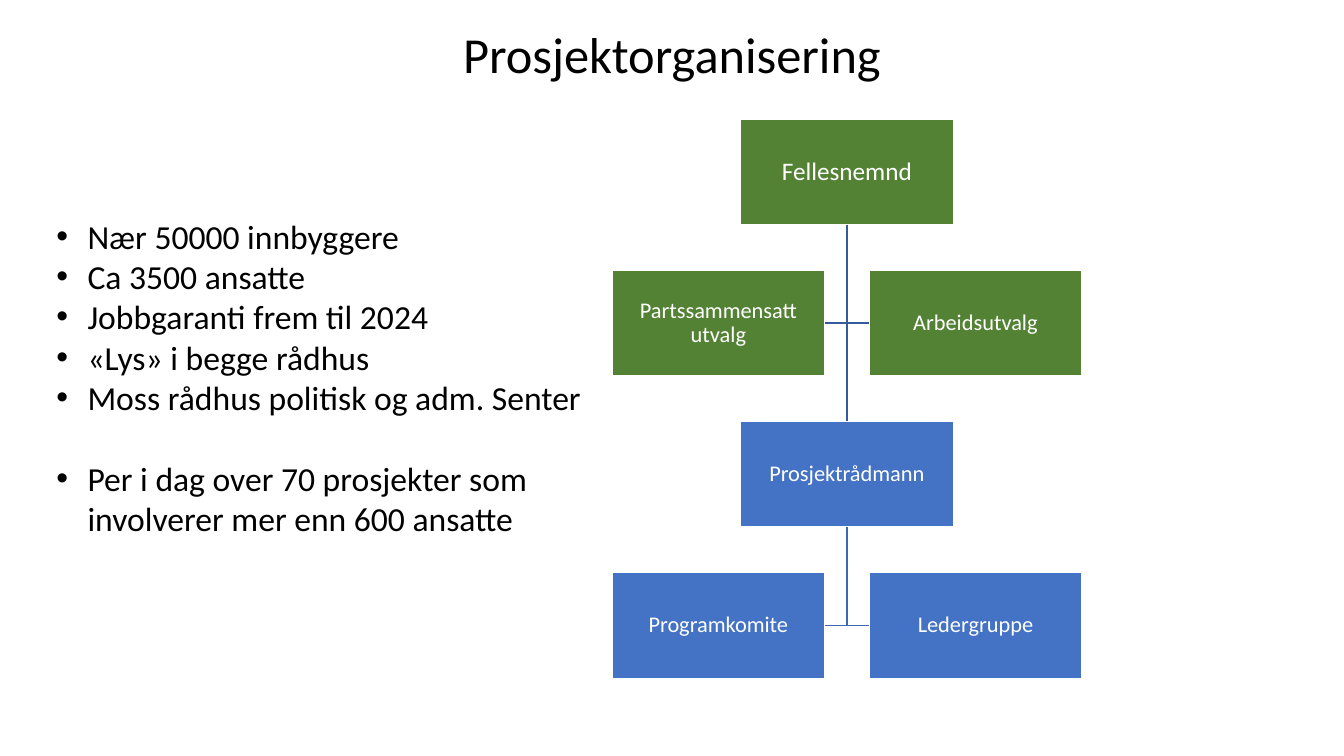
from pptx import Presentation
from pptx.dml.color import RGBColor
from pptx.enum.shapes import MSO_CONNECTOR as CONN, MSO_SHAPE as SHAPE
from pptx.enum.text import MSO_ANCHOR as ANCHOR, MSO_AUTO_SIZE as AUTO, PP_ALIGN as ALIGN
from pptx.oxml.ns import qn
from pptx.util import Inches, Pt
from lxml import etree

BLACK = RGBColor(0x00, 0x00, 0x00)
WHITE = RGBColor(0xFF, 0xFF, 0xFF)
GREEN = RGBColor(0x54, 0x82, 0x35)
BLUE = RGBColor(0x44, 0x72, 0xC4)
DARK_LINE = RGBColor(0x36, 0x5B, 0x9D)
LIGHT_LINE = RGBColor(0x3E, 0x67, 0xB2)

# Grid of the organisation chart, in inches
CENTRE, TOP, ROW_STEP = 8.4, 1.18, 1.5
BOX_W, BOX_H, HALF_GAP = 2.11, 1.05, 0.22


class OrgSlide:
    font = "Calibri"

    def __init__(self, prs):
        self.s = prs.slides.add_slide(prs.slide_layouts[5])

    def style(self, p, size, color, align=None, spacing=None):
        p.alignment = align
        p.line_spacing = spacing
        for r in p.runs:
            r.font.name = self.font
            r.font.size = Pt(size)
            r.font.color.rgb = color

    def title(self, text, x, y, w, h):
        sp = self.s.shapes.title
        sp.left, sp.top, sp.width, sp.height = map(Inches, (x, y, w, h))
        tf = sp.text_frame
        tf.text = text
        tf.vertical_anchor = ANCHOR.MIDDLE
        self.style(tf.paragraphs[0], 36, BLACK, ALIGN.CENTER, 0.9)

    def bullets(self, items, x, y, w, h):
        tf = self.s.shapes.add_textbox(*map(Inches, (x, y, w, h))).text_frame
        tf.word_wrap = True
        tf.auto_size = AUTO.SHAPE_TO_FIT_TEXT
        tf.text = "\n".join(items)
        for p in tf.paragraphs:
            pPr = p._p.get_or_add_pPr()
            pPr.set("marL", str(Inches(0.31)))
            pPr.set("indent", str(-Inches(0.31)))
            etree.SubElement(pPr, qn("a:buFont")).set("typeface", "Arial")
            etree.SubElement(pPr, qn("a:buChar")).set("char", "•")
            self.style(p, 24, BLACK)
        return tf

    def box(self, text, row, side, fill, size=16):
        """side: -1 left of the trunk, 0 on it, 1 right of it."""
        x = CENTRE - BOX_W / 2 + side * (BOX_W / 2 + HALF_GAP)
        y = TOP + row * ROW_STEP
        sp = self.s.shapes.add_shape(SHAPE.RECTANGLE, *map(Inches, (x, y, BOX_W, BOX_H)))
        sp.shadow.inherit = False
        sp.fill.solid()
        sp.fill.fore_color.rgb = fill
        sp.line.color.rgb = WHITE
        sp.line.width = Pt(1)
        tf = sp.text_frame
        tf.word_wrap = True
        tf.vertical_anchor = ANCHOR.MIDDLE
        tf.margin_left = tf.margin_right = tf.margin_top = tf.margin_bottom = Inches(0.01)
        tf.text = text
        self.style(tf.paragraphs[0], size, WHITE, ALIGN.CENTER, 0.9)
        return sp

    def trunk(self, upper, lower, color):
        line = self.s.shapes.add_connector(CONN.STRAIGHT, 0, 0, 0, 0)
        line.begin_connect(upper, 2)
        line.end_connect(lower, 0)
        line.line.color.rgb = color
        line.line.width = Pt(1)
        etree.SubElement(line._element.spPr, qn("a:effectLst"))

    def branch(self, parent, side, color):
        x, y = Inches(CENTRE), parent.top + parent.height
        end_y = parent.top + Inches(ROW_STEP + BOX_H / 2)
        fb = self.s.shapes.build_freeform(x, y)
        fb.add_line_segments([(x, end_y), (x + side * Inches(HALF_GAP), end_y)], close=False)
        sp = fb.convert_to_shape()
        sp.shadow.inherit = False
        sp.fill.background()
        sp.line.color.rgb = color
        sp.line.width = Pt(1)


def main():
    prs = Presentation()
    prs.slide_width, prs.slide_height = Inches(13.33), Inches(7.5)
    slide = OrgSlide(prs)
    slide.title("Prosjektorganisering", 0, 0.1, 13.33, 0.94)

    # Organisation chart
    board = slide.box("Fellesnemnd", 0, 0, GREEN, 18)
    manager = slide.box("Prosjektrådmann", 2, 0, BLUE)
    for row, fill, names in (
        (1, GREEN, ("Partssammensatt utvalg", "Arbeidsutvalg")),
        (3, BLUE, ("Programkomite", "Ledergruppe")),
    ):
        for side, name in zip((-1, 1), names):
            slide.box(name, row, side, fill)

    # Lines
    for parent, color in ((board, DARK_LINE), (manager, LIGHT_LINE)):
        for side in (-1, 1):
            slide.branch(parent, side, color)
    slide.trunk(board, manager, DARK_LINE)

    # Key facts; the last one stands apart by one line
    tf = slide.bullets([
        "Nær 50000 innbyggere",
        "Ca 3500 ansatte",
        "Jobbgaranti frem til 2024",
        "«Lys» i begge rådhus",
        "Moss rådhus politisk og adm. Senter",
        "Per i dag over 70 prosjekter som involverer mer enn 600 ansatte",
    ], 0.46, 2.09, 5.51, 3.33)
    tf.paragraphs[-1].space_before = Pt(29)

    prs.save("out.pptx")


if __name__ == "__main__":
    main()
